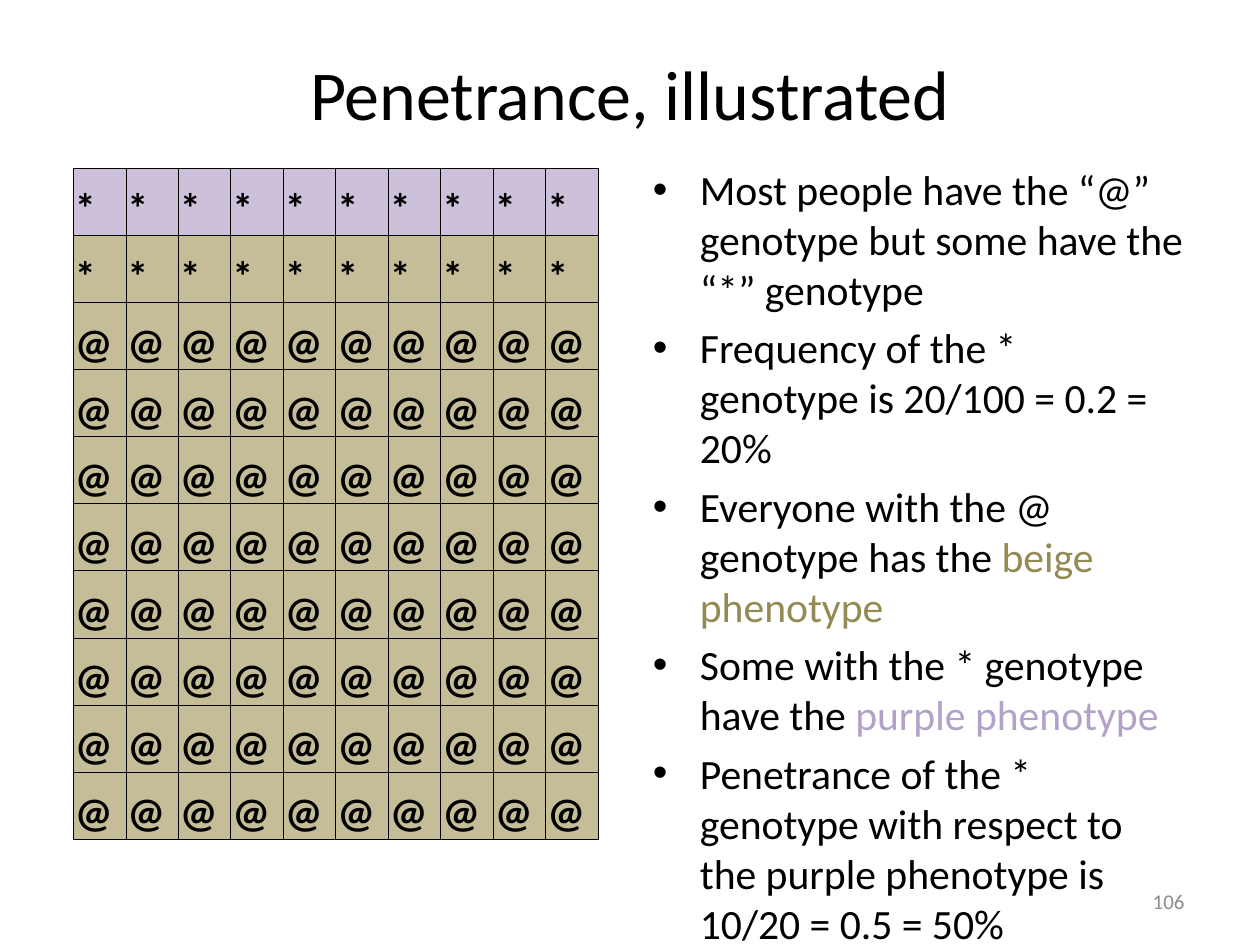
from lxml.etree import SubElement
from pptx import Presentation
from pptx.dml.color import RGBColor
from pptx.enum.text import MSO_ANCHOR as Anchor, PP_ALIGN as Align
from pptx.oxml.ns import qn
from pptx.util import Cm, Pt

FONT = "Calibri"
BLACK = RGBColor(0x00, 0x00, 0x00)
GREY = RGBColor(0x8C, 0x8C, 0x8C)
PURPLE_FILL = RGBColor(0xCC, 0xC0, 0xDA)
BEIGE_FILL = RGBColor(0xC4, 0xBD, 0x97)
PURPLE_TEXT = RGBColor(0xB3, 0xA2, 0xC7)
BEIGE_TEXT = RGBColor(0x94, 0x8A, 0x54)

COLUMNS = 10
GENOTYPE_ROWS = [("*", PURPLE_FILL), ("*", BEIGE_FILL)] + [("@", BEIGE_FILL)] * 8
BULLETS = [
    [("Most people have the “@” genotype but some have the “*” genotype", BLACK)],
    [("Frequency of the * genotype is 20/100 = 0.2 = 20%", BLACK)],
    [("Everyone with the @ genotype has the ", BLACK), ("beige phenotype", BEIGE_TEXT)],
    [("Some with the * genotype have the ", BLACK), ("purple phenotype", PURPLE_TEXT)],
    [("Penetrance of the * genotype with respect to the purple phenotype "
      "is 10/20 = 0.5 = 50%", BLACK)],
]


def add_run(paragraph, text, size, color=BLACK, bold=False):
    """Append one formatted run to a paragraph."""
    run = paragraph.add_run()
    run.text = text
    run.font.name = FONT
    run.font.size = Pt(size)
    run.font.bold = bold
    run.font.color.rgb = color


def add_text_frame(slide, left, top, width, height, anchor):
    """Add a wrapping text box and return its text frame."""
    box = slide.shapes.add_textbox(Cm(left), Cm(top), Cm(width), Cm(height))
    frame = box.text_frame
    frame.word_wrap = True
    frame.vertical_anchor = anchor
    return frame


def add_label(slide, bounds, text, size, color, alignment):
    """Add a vertically centred line of text."""
    paragraph = add_text_frame(slide, *bounds, Anchor.MIDDLE).paragraphs[0]
    paragraph.alignment = alignment
    add_run(paragraph, text, size, color)


def add_bullets(slide, bounds, bullets, size):
    """Add a bulleted list with hanging indents."""
    frame = add_text_frame(slide, *bounds, Anchor.TOP)
    for index, runs in enumerate(bullets):
        paragraph = frame.add_paragraph() if index else frame.paragraphs[0]
        paragraph.space_before = Pt(4.8)
        properties = paragraph._p.get_or_add_pPr()
        properties.set("marL", str(Cm(0.95)))
        properties.set("indent", str(-Cm(0.95)))
        SubElement(properties, qn("a:buFont"), typeface="Arial")
        SubElement(properties, qn("a:buChar"), char="•")
        for text, color in runs:
            add_run(paragraph, text, size, color)


def style_cell(cell, symbol, fill):
    """Fill, border and label one genotype cell."""
    cell.margin_left = cell.margin_right = cell.margin_top = Cm(0.03)
    cell.margin_bottom = 0
    cell.vertical_anchor = Anchor.BOTTOM
    add_run(cell.text_frame.paragraphs[0], symbol, 24, bold=True)
    properties = cell._tc.get_or_add_tcPr()
    for side in ("lnL", "lnR", "lnT", "lnB"):
        line = SubElement(properties, qn(f"a:{side}"), w=str(Pt(0.5)))
        solid = SubElement(line, qn("a:solidFill"))
        SubElement(solid, qn("a:srgbClr"), val=str(BLACK))
    cell.fill.solid()
    cell.fill.fore_color.rgb = fill


def add_genotype_table(slide, left, top, width, height):
    """Add the grid of people, one symbol per cell."""
    row_count = len(GENOTYPE_ROWS)
    table = slide.shapes.add_table(
        row_count, COLUMNS, Cm(left), Cm(top), Cm(width), Cm(height)).table
    for column in table.columns:
        column.width = Cm(width / COLUMNS)
    for row, (symbol, fill) in zip(table.rows, GENOTYPE_ROWS):
        row.height = Cm(height / row_count)
        for cell in row.cells:
            style_cell(cell, symbol, fill)


def main():
    """Build the penetrance slide."""
    presentation = Presentation()
    presentation.slide_width = Cm(25.4)
    presentation.slide_height = Cm(19.05)
    slide = presentation.slides.add_slide(presentation.slide_layouts[6])
    add_label(slide, (1.27, 0.76, 22.86, 2.21), "Penetrance, illustrated",
              40, BLACK, Align.CENTER)
    add_genotype_table(slide, 1.48, 3.39, 10.58, 13.53)
    add_bullets(slide, (12.91, 3.18, 11.22, 13.84), BULLETS, 23.8)
    add_label(slide, (18.2, 17.66, 5.93, 1.01), "106", 12, GREY, Align.RIGHT)
    presentation.save("out.pptx")


if __name__ == "__main__":
    main()
